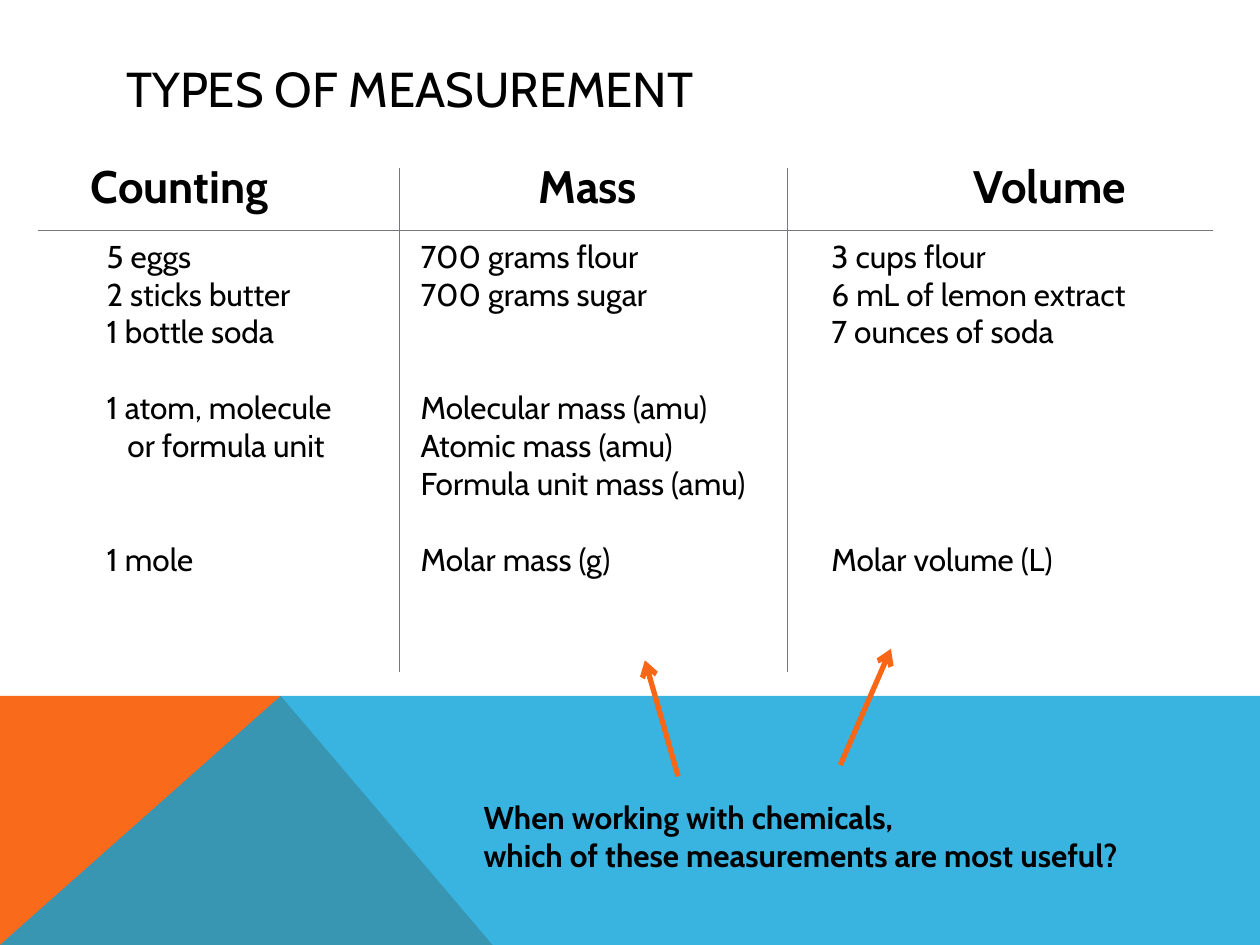
"""Builds a slide that sorts kitchen and chemistry measurements into three types."""
from lxml import etree
from pptx import Presentation
from pptx.dml.color import RGBColor
from pptx.enum import shapes, text
from pptx.oxml import ns
from pptx.util import Cm, Pt

COLORS = {"ink": "000000", "rule": "76787B", "arrow": "F96615",
          "orange": "F96A1B", "blue": "08A1D9"}
FONT = "Cabin"
ROW = 21.7
HEADINGS = [("Counting", 1.58), ("Mass", 10.6), ("Volume", 19.37)]
COLUMNS = [
    {"left": 1.9, "width": 5.4, "rows": {
        0: "5 eggs", 1: "2 sticks butter", 2: "1 bottle soda",
        4: "1 atom, molecule", 5: "or formula unit", 8: "1 mole"}, "indents": {5: 0.42}},
    {"left": 8.23, "width": 7.65, "rows": {
        0: "700 grams flour", 1: "700 grams sugar", 4: "Molecular mass (amu)",
        5: "Atomic mass (amu)", 6: "Formula unit mass (amu)", 8: "Molar mass (g)"}},
    {"left": 16.51, "width": 6.65, "rows": {
        0: "3 cups flour", 1: "6 mL of lemon extract", 2: "7 ounces of soda",
        8: "Molar volume (L)"}},
]
QUESTION = {0: "When working with chemicals,",
            1: "which of these measurements are most useful?"}
RULES = [((0.76, 4.65), (24.46, 4.65)),
         ((8.05, 3.38), (8.05, 13.54)),
         ((15.88, 3.38), (15.88, 13.54))]
ARROWS = [((13.67, 15.65), (13, 13.31)), ((16.94, 15.42), (17.96, 13.08))]
BANDS = [
    ("orange", 100, [(0, 19.05), (0, 14.03), (5.66, 14.03), (9.93, 19.05)]),
    ("blue", 80, [(0, 19.05), (5.66, 14.03), (25.4, 14.03), (25.4, 19.05)]),
]


def rgb(name):
    return RGBColor.from_string(COLORS[name])


def place(shape, left, top, width, height, anchor):
    shape.left, shape.top, shape.width, shape.height = map(Cm, (left, top, width, height))
    shape.text_frame.auto_size = text.MSO_AUTO_SIZE.NONE
    shape.text_frame.vertical_anchor = anchor
    return shape.text_frame


def write(frame, rows, size=18, bold=False, indents=None):
    frame.word_wrap = True
    previous = -1
    for row, words in rows.items():
        line = frame.paragraphs[0] if previous < 0 else frame.add_paragraph()
        line.alignment = text.PP_ALIGN.LEFT
        line.line_spacing = 1.0
        line.space_before = Pt((row - previous - 1) * ROW)
        props = line._p.get_or_add_pPr()
        props.set("marL", str(Cm((indents or {}).get(row, 0))))
        props.set("indent", "0")
        etree.SubElement(props, ns.qn("a:buNone"))
        run = line.add_run()
        run.text = words
        run.font.name, run.font.size, run.font.bold = FONT, Pt(size), bold
        run.font.color.rgb = rgb("ink")
        previous = row


def add_band(slide, color, opacity, points):
    corners = [(Cm(x), Cm(y)) for x, y in points]
    builder = slide.shapes.build_freeform(*corners[0])
    builder.add_line_segments(corners[1:], close=True)
    band = builder.convert_to_shape()
    band.shadow.inherit = False
    band.fill.solid()
    band.fill.fore_color.rgb = rgb(color)
    band.line.fill.background()
    if opacity < 100:
        tint = band._element.spPr.find(".//" + ns.qn("a:srgbClr"))
        etree.SubElement(tint, ns.qn("a:alpha"), val=str(opacity * 1000))


def add_line(slide, start, end, color, width, arrow=False):
    line = slide.shapes.add_connector(shapes.MSO_CONNECTOR.STRAIGHT, *map(Cm, start + end))
    line.line.color.rgb = rgb(color)
    line.line.width = Pt(width)
    if arrow:
        etree.SubElement(line.line._get_or_add_ln(), ns.qn("a:tailEnd"), type="arrow")
    etree.SubElement(line._element.spPr, ns.qn("a:effectLst"))


def main():
    deck = Presentation()
    deck.slide_width, deck.slide_height = Cm(25.4), Cm(19.05)
    slide = deck.slides.add_slide(deck.slide_layouts.get_by_name("Comparison"))
    for band in BANDS:
        add_band(slide, *band)
    title = place(slide.shapes.title, 2.29, 1.02, 20.88, 1.52, text.MSO_ANCHOR.MIDDLE)
    write(title, {0: "TYPES OF MEASUREMENT"}, size=28)
    *bodies, spare = list(slide.placeholders)[1:5]
    for body, (heading, left) in zip(bodies, HEADINGS):
        frame = place(body, left, 3.05, 5, 1.5, text.MSO_ANCHOR.TOP)
        write(frame, {0: heading}, size=26, bold=True)
    spare._element.getparent().remove(spare._element)
    for start, end in RULES:
        add_line(slide, start, end, "rule", 0.75)
    for column in COLUMNS:
        box = slide.shapes.add_textbox(Cm(column["left"]), Cm(4.65), Cm(column["width"]), Cm(7.2))
        write(box.text_frame, column["rows"], indents=column.get("indents"))
    question = slide.shapes.add_textbox(Cm(9.5), Cm(15.96), Cm(15), Cm(1.8))
    write(question.text_frame, QUESTION, bold=True)
    for start, end in ARROWS:
        add_line(slide, start, end, "arrow", 3, arrow=True)
    deck.save("out.pptx")


if __name__ == "__main__":
    main()
